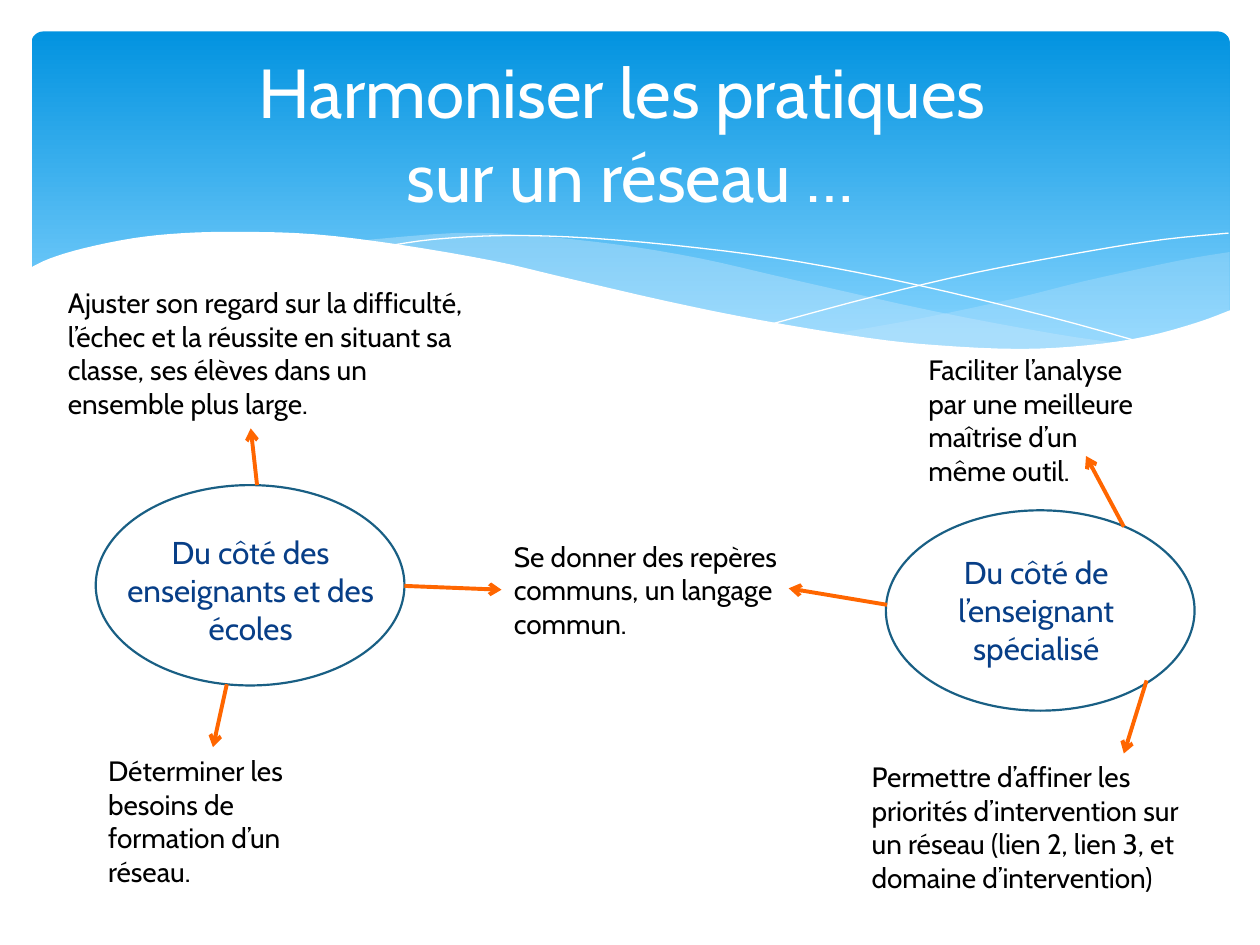
from lxml.etree import SubElement
from pptx import Presentation
from pptx.dml.color import RGBColor
from pptx.enum.shapes import MSO_CONNECTOR, MSO_SHAPE
from pptx.enum.text import MSO_ANCHOR, MSO_AUTO_SIZE, PP_ALIGN
from pptx.oxml.ns import qn
from pptx.util import Pt

WHITE = RGBColor(0xFF, 0xFF, 0xFF)
BLACK = RGBColor(0x00, 0x00, 0x00)
SKY_TOP = RGBColor(0x02, 0x93, 0xE0)
SKY_BOTTOM = RGBColor(0x83, 0xD3, 0xFE)
PALE = RGBColor(0xC6, 0xE7, 0xFC)
NAVY = RGBColor(0x07, 0x3E, 0x87)
TEAL = RGBColor(0x19, 0x5F, 0x84)
ORANGE = RGBColor(0xFF, 0x66, 0x00)
FONT = "Cabin"

TITLE = "Harmoniser les pratiques \nsur un réseau …"
TITLE_BOX = (36, 26.6, 648, 98.6)
BAND_BOX = (18, 18, 684.7, 194.4)

# Boxes are left, top, width, height
NOTES = [
    ("Ajuster son regard sur la difficulté, l’échec et la réussite en situant sa classe, "
     "ses élèves dans un ensemble plus large.", (31.7, 159.8, 245.5, 85)),
    ("Permettre d’affiner les priorités d’intervention sur un réseau (lien 2, lien 3, "
     "et domaine d’intervention)", (491, 430.6, 207.4, 85)),
    ("Faciliter l’analyse par une meilleure maîtrise d’un même outil.",
     (523.4, 198, 137.5, 85)),
    ("Déterminer les besoins de formation d’un réseau.", (54.7, 427, 133.9, 85)),
    ("Se donner des repères communs, un langage commun.", (286.6, 304.6, 203.8, 65.5)),
]
LABELS = [
    ("Du côté des enseignants et des écoles", (55.4, 301, 175.7, 72.7)),
    ("Du côté de l’enseignant spécialisé", (512.6, 312.5, 159.1, 72.7)),
]
ELLIPSES = [(54.7, 277.2, 176.4, 114.5), (506.2, 291.6, 176.4, 114.5)]
ARROWS = [
    ((129.6, 391), (121.7, 427)),
    ((146.9, 277.2), (143.3, 244.8)),
    ((642.2, 301), (620.6, 260.6)),
    ((655.2, 388.8), (642.2, 430.6)),
    ((506.9, 345.6), (450.7, 336.2)),
    ((231.1, 334.8), (286.6, 337)),
]

# Each wave is a list of smooth edges that meet at corners
RIGHT_WAVE = [
    [(702.7, 144), (673.2, 149), (619.9, 160.6), (579.6, 170.6), (524.9, 182.2),
     (475.9, 190.8)],
    [(475.9, 190.8), (507.6, 195.1), (545, 198.7), (586.1, 200.2), (627.8, 197.3),
     (663.1, 190.8), (702.7, 177.8)],
]
MIDDLE_WAVE = [
    [(643, 196.6), (602.6, 190.8), (533.5, 177.8), (452.9, 159.8), (399.6, 147.6),
     (352.1, 139.7), (302.4, 134.6), (259.9, 133.2), (205.9, 137.5)],
    [(205.9, 137.5), (260.6, 146.2), (323.3, 159.8), (407.5, 178.6), (468, 190.1),
     (519.8, 197.3), (573.1, 200.2), (617, 199.4), (643, 196.6)],
]
FALLING_LINE = [
    [(222.5, 140.4), (247.7, 136.8), (288.7, 134.6), (337.7, 136.1), (400.3, 141.8),
     (457.9, 149.8), (523.4, 162.7), (598.3, 180.7), (653, 195.8)],
]
RISING_LINE = [
    [(441.4, 185), (500.4, 169.2), (558.7, 155.5), (623.5, 143.3), (665.3, 136.8),
     (702, 133.2)],
]
WHITE_WAVE = [
    [(16.6, 153.4), (28.8, 147.6), (48.2, 141.8), (76.3, 136.1), (105.1, 133.2),
     (139, 132.5), (180, 133.9), (227.5, 139.7), (281.5, 149), (321.8, 158.4),
     (380.9, 172.1), (434.2, 182.9), (495.4, 193), (535.7, 197.3), (582.5, 199.4),
     (621.4, 197.3), (655.2, 192.2), (684, 184.3), (703.4, 177.1)],
    [(703.4, 236.9), (16.6, 236.9)],
]


def smooth(points, steps=4):
    """Return points along a Catmull-Rom curve through the given points."""
    if len(points) < 3:
        return points
    padded = [points[0], *points, points[-1]]
    curve = [points[0]]
    for a, b, c, d in zip(padded, padded[1:], padded[2:], padded[3:]):
        for t in (i / steps for i in range(1, steps + 1)):
            curve.append(tuple(
                (2 * q + (s - p) * t + (2 * p - 5 * q + 4 * s - u) * t ** 2
                 + (3 * q - p - 3 * s + u) * t ** 3) / 2
                for p, q, s, u in zip(a, b, c, d)))
    return curve


def add_wave(shapes, edges, fill=None, alpha=None):
    """Draw a filled wave, or a white hairline when there is no fill."""
    points = [(x * 100, y * 100) for edge in edges for x, y in smooth(edge)]
    builder = shapes.build_freeform(*points[0], scale=Pt(1) / 100)
    builder.add_line_segments(points[1:], close=fill is not None)
    sp = builder.convert_to_shape()
    sp.shadow.inherit = False
    if fill is None:
        sp.fill.background()
        sp.line.color.rgb = WHITE
        sp.line.width = Pt(0)
        return
    sp.fill.solid()
    sp.fill.fore_color.rgb = fill
    sp.line.fill.background()
    if alpha:
        color = sp._element.spPr.find(qn("a:solidFill"))[0]
        SubElement(color, qn("a:alpha"), val=str(alpha * 1000))


def add_band(shapes):
    sp = shapes.add_shape(MSO_SHAPE.ROUNDED_RECTANGLE, *map(Pt, BAND_BOX))
    sp.adjustments[0] = 0.034
    sp.shadow.inherit = False
    sp.line.fill.background()
    sp.fill.gradient()
    sp.fill.gradient_angle = 270
    for stop, color, position in zip(sp.fill.gradient_stops, (SKY_TOP, SKY_BOTTOM), (0, 0.9)):
        stop.color.rgb = color
        stop.position = position


def write(tf, text, size=16, color=BLACK, align=PP_ALIGN.LEFT, anchor=MSO_ANCHOR.TOP,
          fit=MSO_AUTO_SIZE.SHAPE_TO_FIT_TEXT):
    tf.word_wrap = True
    tf.auto_size = fit
    tf.vertical_anchor = anchor
    p = tf.paragraphs[0]
    p.text = text
    p.alignment = align
    for r in p.runs:
        r.font.name = FONT
        r.font.size = Pt(size)
        r.font.color.rgb = color


def add_text(shapes, text, box, **style):
    write(shapes.add_textbox(*map(Pt, box)).text_frame, text, **style)


def add_ellipse(shapes, box):
    sp = shapes.add_shape(MSO_SHAPE.OVAL, *map(Pt, box))
    sp.shadow.inherit = False
    sp.fill.background()
    sp.line.color.rgb = TEAL
    sp.line.width = Pt(1.25)


def add_arrow(shapes, start, end):
    line = shapes.add_connector(MSO_CONNECTOR.STRAIGHT, *map(Pt, start + end))
    line.line.color.rgb = ORANGE
    line.line.width = Pt(2.25)
    SubElement(line.line._get_or_add_ln(), qn("a:tailEnd"), type="arrow")
    SubElement(line._element.spPr, qn("a:effectLst"))


def main():
    prs = Presentation()
    prs.slide_width, prs.slide_height = Pt(720), Pt(540)
    slide = prs.slides.add_slide(prs.slide_layouts[5])
    shapes = slide.shapes

    add_band(shapes)
    add_wave(shapes, RIGHT_WAVE, PALE, alpha=29)
    add_wave(shapes, MIDDLE_WAVE, PALE, alpha=40)
    add_wave(shapes, FALLING_LINE)
    add_wave(shapes, RISING_LINE)
    add_wave(shapes, WHITE_WAVE, WHITE)

    title = shapes.title
    title.left, title.top, title.width, title.height = map(Pt, TITLE_BOX)
    write(title.text_frame, TITLE, size=39.6, color=WHITE, align=PP_ALIGN.CENTER,
          anchor=MSO_ANCHOR.MIDDLE, fit=MSO_AUTO_SIZE.NONE)
    shapes._spTree.append(title._element)  # in front of the band

    for text, box in NOTES:
        add_text(shapes, text, box)
    for text, box in LABELS:
        add_text(shapes, text, box, size=18, color=NAVY, align=PP_ALIGN.CENTER)
    for box in ELLIPSES:
        add_ellipse(shapes, box)
    for start, end in ARROWS:
        add_arrow(shapes, start, end)
    prs.save("out.pptx")


if __name__ == "__main__":
    main()
